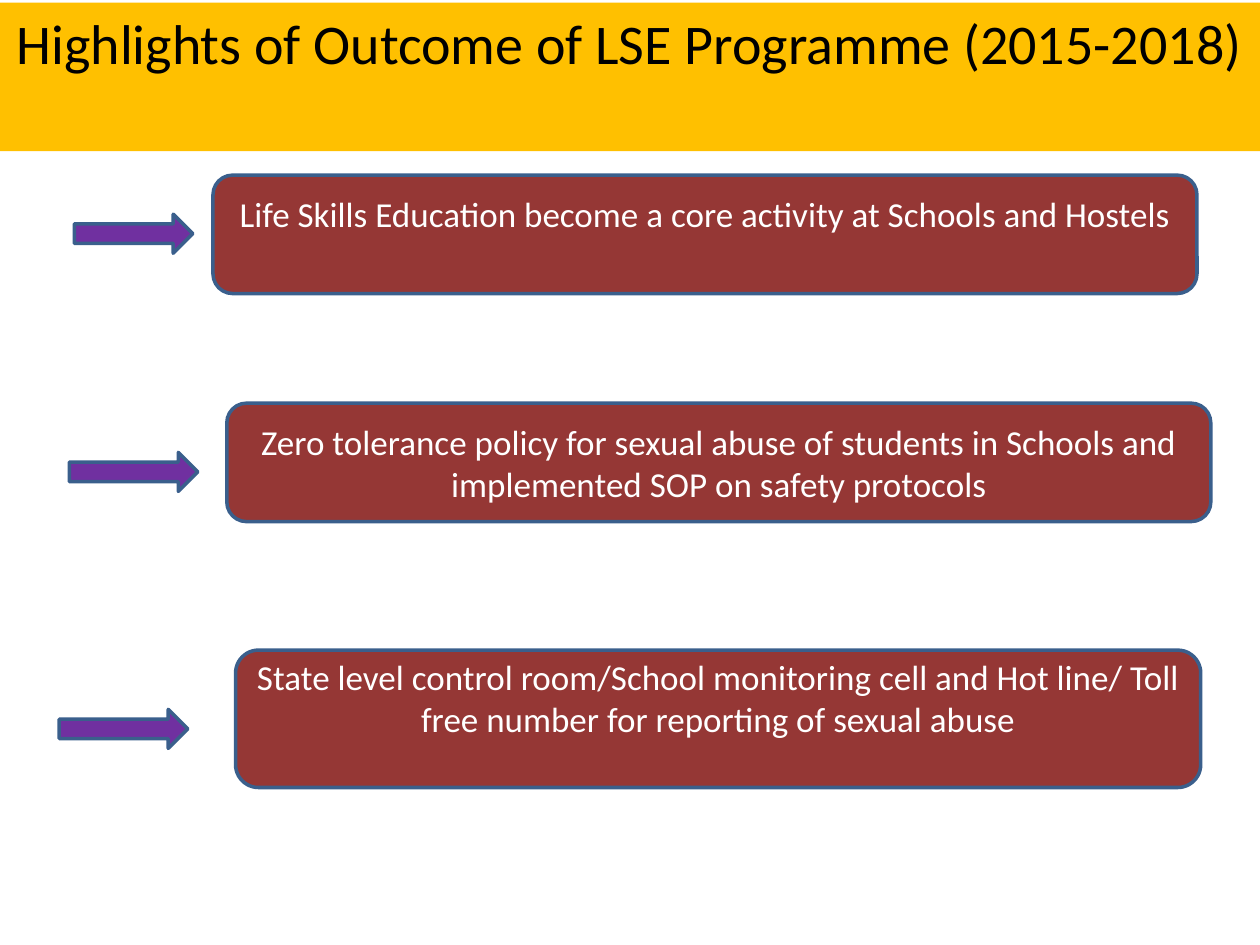
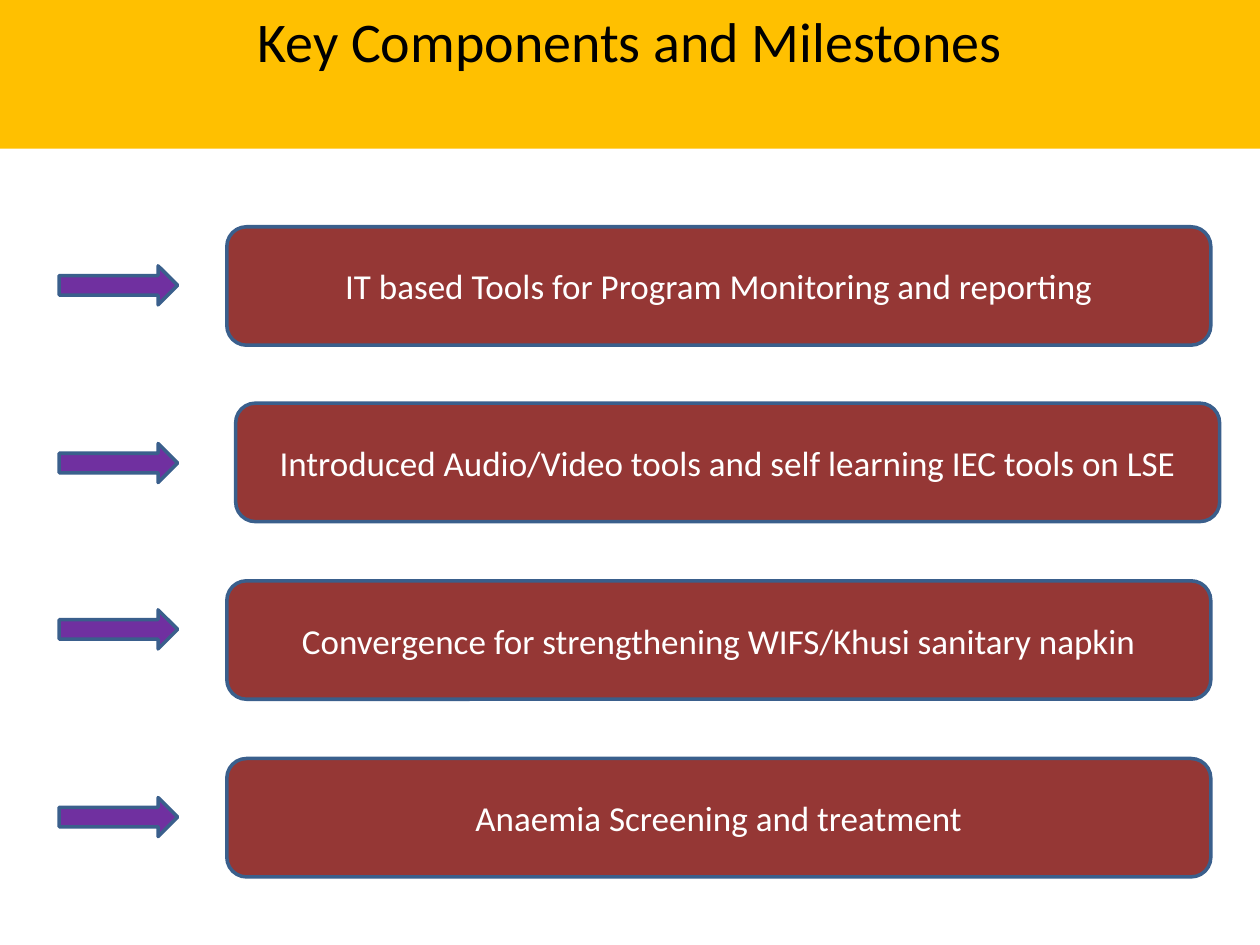
from pptx import Presentation
from pptx.dml.color import RGBColor
from pptx.enum import shapes, text
from pptx.util import Inches, Pt

AMBER = RGBColor(0xFF, 0xC0, 0x00)
MAROON = RGBColor(0x95, 0x37, 0x35)
PURPLE = RGBColor(0x70, 0x30, 0xA0)
STEEL_BLUE = RGBColor(0x3A, 0x5F, 0x8C)
BLACK = RGBColor(0, 0, 0)
WHITE = RGBColor(0xFF, 0xFF, 0xFF)
FONT = "Calibri"

SLIDE_WIDTH, SLIDE_HEIGHT = 10, 7.5
BAND_HEIGHT = 1.18
BOX_WIDTH, BOX_HEIGHT = 7.81, 0.94
ARROW_WIDTH, ARROW_HEIGHT = 0.94, 0.31
INSET = 0.05
RAISED_INSET = 0.38  # lifts the text by half a line

# Each item: text, box (left, top), arrow (left, top), then any differing sizes
SLIDES = [
    {
        "title": "Highlights of Outcome of LSE Programme (2015-2018)",
        "band_top": 0.02,
        "items": [
            {"text": "Life Skills Education become a core activity at Schools and Hostels",
             "box": (1.69, 1.39), "arrow": (0.59, 1.7), "bottom_inset": RAISED_INSET},
            {"text": "Zero tolerance policy for sexual abuse of students in Schools "
                     "and implemented SOP on safety protocols",
             "box": (1.8, 3.2), "arrow": (0.55, 3.59), "arrow_width": 1.02},
            {"text": "State level control room/School monitoring cell and Hot line/ "
                     "Toll free number for reporting of sexual abuse",
             "box": (1.87, 5.16), "box_size": (7.66, 1.09),
             "arrow": (0.47, 5.63), "arrow_width": 1.02, "bottom_inset": RAISED_INSET},
        ],
    },
    {
        "title": "Key Components and Milestones",
        "band_top": 0,
        "items": [
            {"text": "IT based Tools for Program Monitoring and reporting",
             "box": (1.8, 1.8), "arrow": (0.47, 2.11)},
            {"text": "Introduced Audio/Video tools and self learning IEC tools on LSE",
             "box": (1.87, 3.2), "arrow": (0.47, 3.52)},
            {"text": "Convergence for strengthening WIFS/Khusi sanitary napkin",
             "box": (1.8, 4.61), "arrow": (0.47, 4.84)},
            {"text": "Anaemia Screening and treatment",
             "box": (1.8, 6.02), "arrow": (0.47, 6.33)},
        ],
    },
]


def add_shape(slide, kind, position, size, fill, outlined=True):
    shape = slide.shapes.add_shape(kind, *map(Inches, (*position, *size)))
    shape.shadow.inherit = False
    shape.fill.solid()
    shape.fill.fore_color.rgb = fill
    if outlined:
        shape.line.color.rgb = STEEL_BLUE
        shape.line.width = Pt(2)
    else:
        shape.line.fill.background()
    return shape


def write_text(shape, words, size=20, color=WHITE,
               anchor=text.MSO_ANCHOR.MIDDLE, bottom_inset=INSET):
    frame = shape.text_frame
    frame.word_wrap = True
    frame.vertical_anchor = anchor
    frame.margin_bottom = Inches(bottom_inset)
    paragraph = frame.paragraphs[0]
    paragraph.alignment = text.PP_ALIGN.CENTER
    run = paragraph.add_run()
    run.text = words
    run.font.name = FONT
    run.font.size = Pt(size)
    run.font.color.rgb = color


def add_title_band(slide, title, top):
    band = add_shape(slide, shapes.MSO_SHAPE.RECTANGLE, (0, top),
                     (SLIDE_WIDTH, BAND_HEIGHT), AMBER, outlined=False)
    write_text(band, title, size=32, color=BLACK, anchor=text.MSO_ANCHOR.TOP)


def add_item(slide, item):
    """Add a rounded text box and the arrow that points to it."""
    add_shape(slide, shapes.MSO_SHAPE.RIGHT_ARROW, item["arrow"],
              (item.get("arrow_width", ARROW_WIDTH), ARROW_HEIGHT), PURPLE)
    box = add_shape(slide, shapes.MSO_SHAPE.ROUNDED_RECTANGLE, item["box"],
                    item.get("box_size", (BOX_WIDTH, BOX_HEIGHT)), MAROON)
    write_text(box, item["text"], bottom_inset=item.get("bottom_inset", INSET))


def main():
    presentation = Presentation()
    presentation.slide_width = Inches(SLIDE_WIDTH)
    presentation.slide_height = Inches(SLIDE_HEIGHT)
    blank_layout = presentation.slide_layouts[6]
    for content in SLIDES:
        slide = presentation.slides.add_slide(blank_layout)
        add_title_band(slide, content["title"], content["band_top"])
        for item in content["items"]:
            add_item(slide, item)
    presentation.save("out.pptx")


if __name__ == "__main__":
    main()
